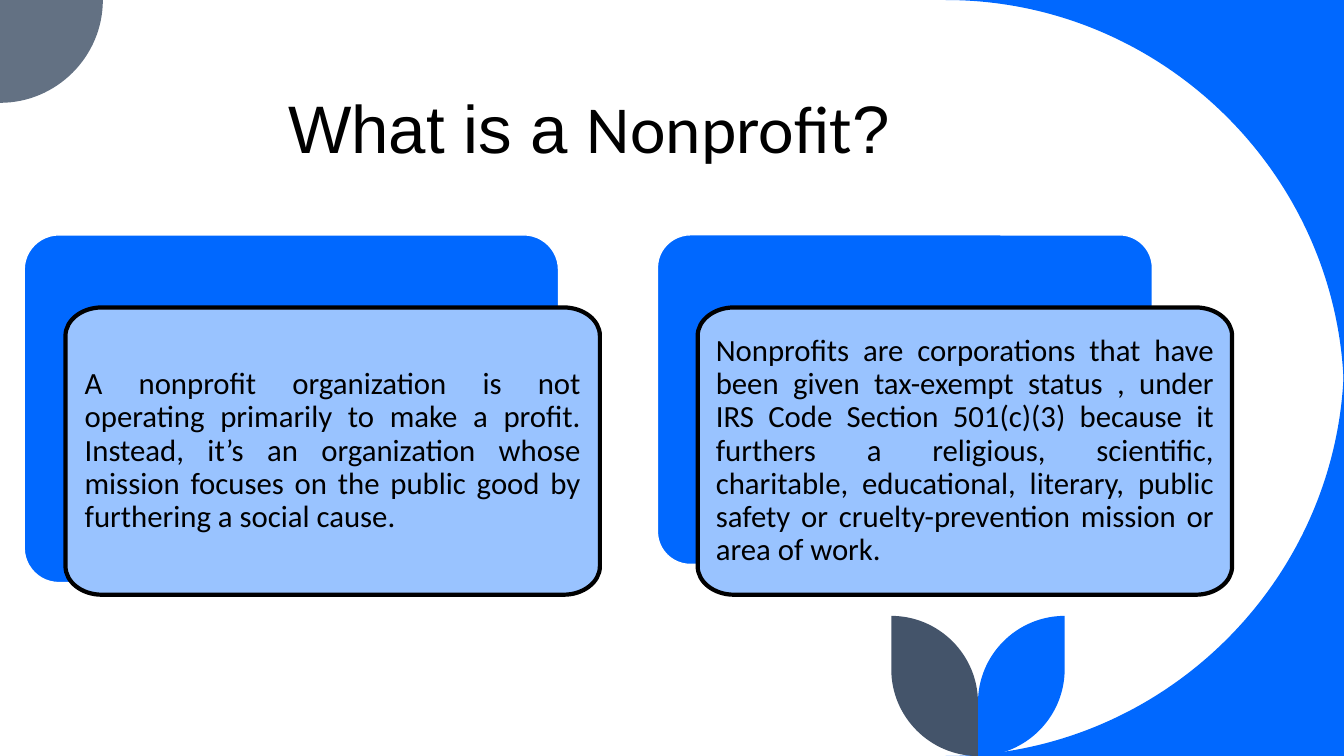
import lxml.etree
import pptx
import pptx.dml.color
import pptx.enum.shapes
import pptx.enum.text
import pptx.oxml.ns
import pptx.util

inch = pptx.util.Inches
WIDTH, HEIGHT = 13.33, 7.5
BLUE, PALE_BLUE, SLATE, GREY = "0068FF", "99C3FF", "44546A", "637183"
BLACK, WHITE = "000000", "FFFFFF"
ROUNDNESS = 0.55  # control point distance of a quarter ellipse

deck = pptx.Presentation()
deck.slide_width, deck.slide_height = inch(WIDTH), inch(HEIGHT)
slide = deck.slides.add_slide(deck.slide_layouts[6])
color = pptx.dml.color.RGBColor.from_string


def outline(start, steps, fill, edge=None):
    """Draw a closed outline; a step is a line end (x, y) or a quarter ellipse
    (corner x, corner y, end x, end y)."""
    points, curve_starts = [start], []
    for step in steps:
        if len(step) == 4:
            curve_starts.append(len(points) - 1)
            corner, end = step[:2], step[2:]
            for anchor in (points[-1], end):
                points.append(tuple(a + ROUNDNESS * (c - a) for a, c in zip(anchor, corner)))
        points.append(step[-2:])
    corners = [(inch(x), inch(y)) for x, y in points]
    builder = slide.shapes.build_freeform(*corners[0])
    builder.add_line_segments(corners[1:], close=True)
    shape = builder.convert_to_shape()
    lines = shape.element.xpath(".//a:lnTo")
    for first in curve_starts:
        curve = lxml.etree.Element(pptx.oxml.ns.qn("a:cubicBezTo"))
        lines[first].addprevious(curve)
        for line in lines[first:first + 3]:
            curve.append(line[0])
            line.getparent().remove(line)
    shape.shadow.inherit = False
    shape.fill.solid()
    shape.fill.fore_color.rgb = color(fill)
    if edge:
        shape.line.color.rgb = color(edge)
        shape.line.width = pptx.util.Pt(3)
    else:
        shape.line.fill.background()
    return shape


# Corner decorations
swoop = 3.95
swoop_x, dot = WIDTH - swoop, 1.02
outline((WIDTH, 0), [(swoop_x, 0), (WIDTH, 0, WIDTH, swoop)], BLUE)
outline((WIDTH, HEIGHT - swoop), [(WIDTH, HEIGHT, swoop_x, HEIGHT), (WIDTH, HEIGHT)], BLUE)
outline((0, 0), [(dot, 0), (dot, dot, 0, dot)], GREY)

# Pair of leaves mirrored about a stem
stem, leaf, leaf_top = 9.7, 0.86, 6.11
for side, leaf_color in ((1, BLUE), (-1, SLATE)):
    tip = stem + side * leaf
    outline((tip, leaf_top),
            [(tip, HEIGHT - leaf), (tip, HEIGHT, stem, HEIGHT),
             (stem, leaf_top + leaf), (stem, leaf_top, tip, leaf_top)], leaf_color)

# Title
title = slide.shapes.add_textbox(inch(2.76), inch(0.77), inch(6.36), inch(0.95)).text_frame
title.word_wrap = True
title.vertical_anchor = pptx.enum.text.MSO_ANCHOR.BOTTOM
title.paragraphs[0].line_spacing = 0.9
for words, font in (("What is a ", "Arial"), ("Nonprofit", "Calibri"), ("?", "Arial")):
    run = title.paragraphs[0].add_run()
    run.text = words
    run.font.name, run.font.size = font, pptx.util.Pt(48)
    run.font.color.rgb = color(BLACK)

# Definition cards, each in front of a blue panel
top, card_width, card_height = 3.05, 5.3, 2.85
bottom = top + card_height
round_x, round_y = 0.36, 0.28
definitions = (
    (0.24, 5.3, 3.45, 0.65, 0.19,
     "A nonprofit organization is not operating primarily to make a profit. "
     "Instead, it’s an organization whose mission focuses on the public good "
     "by furthering a social cause."),
    (6.52, 4.91, 3.27, 6.92, 0.18,
     "Nonprofits are corporations that have been given tax-exempt status , under "
     "IRS Code Section 501(c)(3) because it furthers a religious, scientific, "
     "charitable, educational, literary, public safety or cruelty-prevention "
     "mission or area of work."),
)
for panel_left, panel_width, panel_height, left, inset, definition in definitions:
    panel = slide.shapes.add_shape(
        pptx.enum.shapes.MSO_SHAPE.ROUNDED_RECTANGLE,
        inch(panel_left), inch(2.33), inch(panel_width), inch(panel_height))
    panel.adjustments[0] = 0.1
    panel.shadow.inherit = False
    panel.fill.solid()
    panel.fill.fore_color.rgb = color(BLUE)
    panel.line.color.rgb = color(WHITE)
    panel.line.width = pptx.util.Pt(1)

    right = left + card_width
    card = outline(
        (left, top + round_y),
        [(left, top, left + round_x, top), (right - round_x, top),
         (right, top, right, top + round_y), (right, bottom - round_y),
         (right, bottom, right - round_x, bottom), (left + round_x, bottom),
         (left, bottom, left, bottom - round_y)], PALE_BLUE, BLACK)
    body = card.text_frame
    body.word_wrap = True
    body.vertical_anchor = pptx.enum.text.MSO_ANCHOR.MIDDLE
    body.margin_left = body.margin_right = inch(inset)
    body.margin_top = body.margin_bottom = inch(inset)
    paragraph = body.paragraphs[0]
    paragraph.alignment = pptx.enum.text.PP_ALIGN.JUSTIFY
    paragraph.line_spacing = 0.9
    run = paragraph.add_run()
    run.text = definition
    run.font.name, run.font.size = "Calibri", pptx.util.Pt(22)
    run.font.color.rgb = color(BLACK)

deck.save("out.pptx")
